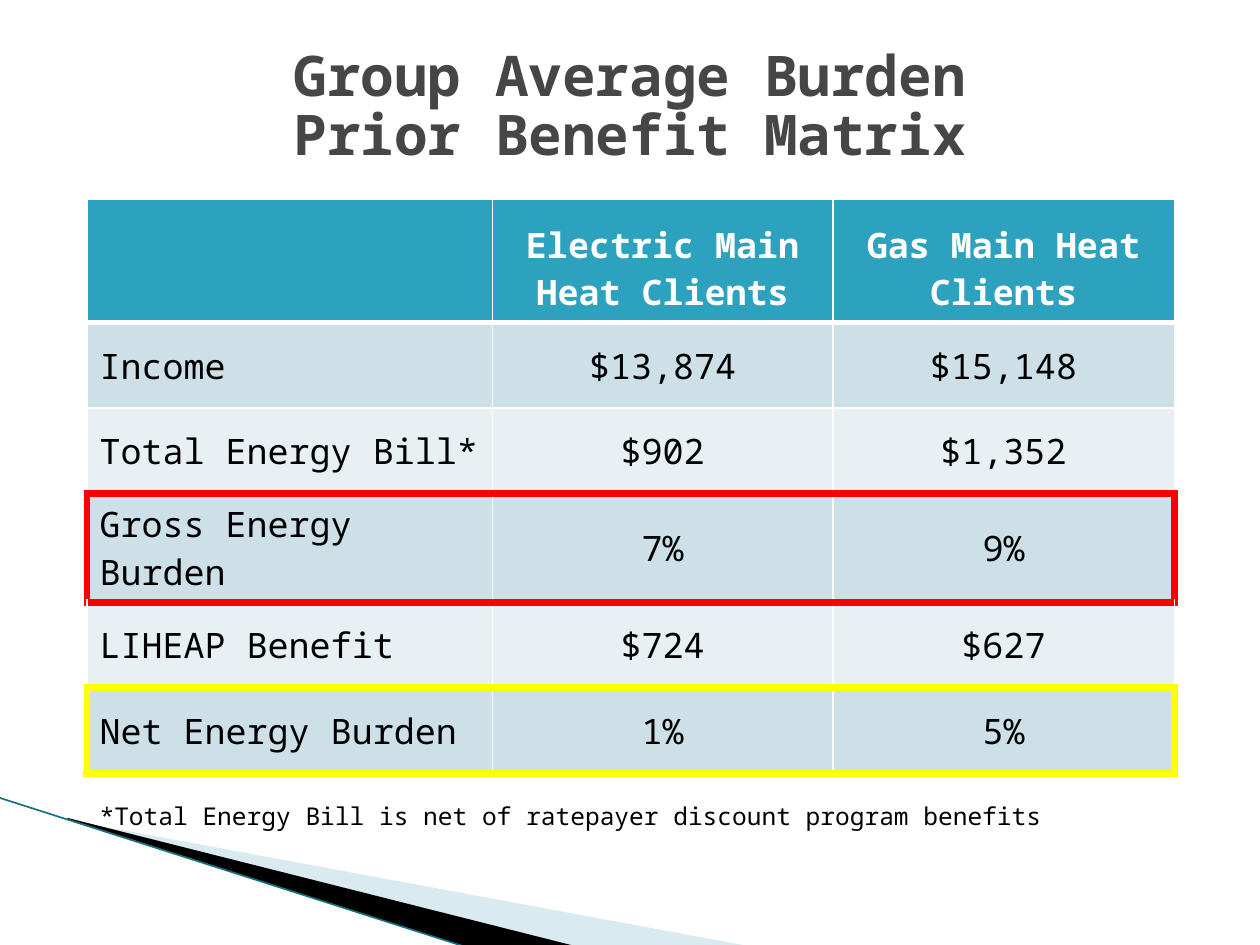
from dataclasses import dataclass

from lxml import etree
from pptx import Presentation
from pptx.dml.color import RGBColor
from pptx.enum.shapes import MSO_CONNECTOR
from pptx.enum.text import MSO_ANCHOR, PP_ALIGN
from pptx.oxml.ns import qn
from pptx.util import Emu, Pt

PX = 9144
FONT = "Noto Sans Mono"
CENTER, LEFT = PP_ALIGN.CENTER, PP_ALIGN.LEFT
MIDDLE, BOTTOM = MSO_ANCHOR.MIDDLE, MSO_ANCHOR.BOTTOM
STRAIGHT = MSO_CONNECTOR.STRAIGHT
WHITE, BLACK, RED, YELLOW = "FFFFFF", "000000", "FF0000", "FFFF00"
HEADER_FILL = "2DA2BF"
BAND_FILLS = ["CDE0E8", "E8F0F4"]
COLUMN_WIDTHS = [322, 270, 271]
HEADER_HEIGHT, ROW_HEIGHT = 98, 68
THICK = 4.5
HIGHLIGHTS = {3: RED, 5: YELLOW}
ROWS = [
    ["", "Electric Main Heat Clients", "Gas Main Heat Clients"],
    ["Income", "$13,874", "$15,148"],
    ["Total Energy Bill*", "$902", "$1,352"],
    ["Gross Energy Burden", "7%", "9%"],
    ["LIHEAP Benefit", "$724", "$627"],
    ["Net Energy Burden", "1%", "5%"],
]
FOOTNOTE = "*Total Energy Bill is net of ratepayer discount program benefits"


@dataclass
class Wedge:
    points: list[tuple[int, int]]
    color: str
    opacity: int = 100


@dataclass
class Border:
    color: str | None = WHITE
    width: float = 1


WEDGES = [
    Wedge([(55, 651), (595, 751), (456, 751), (55, 650)], "A0CBDC", 40),
    Wedge([(53, 649), (457, 751), (372, 752), (54, 650)], BLACK),
]


def px(length: int) -> Emu:
    return Emu(length * PX)


def rgb(color: str) -> RGBColor:
    return RGBColor.from_string(color)


def style_paragraph(paragraph, size: float, color: str, bold: bool, align) -> None:
    paragraph.alignment = align
    for run in paragraph.runs:
        run.font.name = FONT
        run.font.size = Pt(size)
        run.font.bold = bold
        run.font.color.rgb = rgb(color)


def draw_wedge(slide, wedge: Wedge) -> None:
    builder = slide.shapes.build_freeform(*wedge.points[0], scale=PX)
    builder.add_line_segments(wedge.points[1:])
    shape = builder.convert_to_shape()
    shape.shadow.inherit = False
    shape.line.fill.background()
    shape.fill.solid()
    shape.fill.fore_color.rgb = rgb(wedge.color)
    if wedge.opacity < 100:
        color = shape.fill._xPr.find(".//" + qn("a:srgbClr"))
        etree.SubElement(color, qn("a:alpha"), val=str(wedge.opacity * 1000))


def draw_edge(slide) -> None:
    line = slide.shapes.add_connector(STRAIGHT, px(-1), px(633), px(371), px(752))
    line.line.color.rgb = rgb("16707F")
    line.line.width = Pt(0.95)
    etree.SubElement(line._element.spPr, qn("a:effectLst"))


def draw_title(slide) -> None:
    title = slide.shapes.title
    title.left, title.top, title.width, title.height = map(px, (69, 40, 862, 92))
    frame = title.text_frame
    frame.text = "Group Average Burden\vPrior Benefit Matrix"
    frame.vertical_anchor = MIDDLE
    paragraph = frame.paragraphs[0]
    paragraph.line_spacing = 0.88
    style_paragraph(paragraph, 32, "464646", True, CENTER)


def set_borders(cell, borders: dict[str, Border]) -> None:
    properties = cell._tc.get_or_add_tcPr()
    for side in "LRTB":
        border = borders[side]
        line = etree.SubElement(properties, qn(f"a:ln{side}"), w=str(Pt(border.width)))
        if border.color is None:
            etree.SubElement(line, qn("a:noFill"))
        else:
            fill = etree.SubElement(line, qn("a:solidFill"))
            etree.SubElement(fill, qn("a:srgbClr"), val=border.color)


def horizontal_border(above: int) -> Border:
    color = HIGHLIGHTS.get(above) or HIGHLIGHTS.get(above + 1)
    if color:
        return Border(color, THICK)
    return Border(width=3) if above == 0 else Border()


def cell_borders(row: int, column: int) -> dict[str, Border]:
    borders = {"L": Border(), "R": Border()}
    borders["T"] = horizontal_border(row - 1)
    borders["B"] = horizontal_border(row)
    if row in HIGHLIGHTS and column != 1:
        borders["L" if column == 0 else "R"] = Border(HIGHLIGHTS[row], THICK)
    if row == len(ROWS):
        for side in "LRB":
            borders[side] = Border(None)
    return borders


def fill_cell(cell, text: str, row: int, column: int) -> None:
    header, footnote = row == 0, row == len(ROWS)
    set_borders(cell, cell_borders(row, column))
    if footnote:
        cell.fill.background()
    else:
        cell.fill.solid()
        fill = HEADER_FILL if header else BAND_FILLS[(row - 1) % 2]
        cell.fill.fore_color.rgb = rgb(fill)
    cell.vertical_anchor = BOTTOM if header else MIDDLE
    if not text:
        return
    cell.text_frame.text = text
    paragraph = cell.text_frame.paragraphs[0]
    paragraph.space_before = paragraph.space_after = Pt(12 if footnote else 6)
    style_paragraph(paragraph, 14 if footnote else 20, WHITE if header else BLACK,
                    header, CENTER if column else LEFT)


def draw_table(slide) -> None:
    rows = ROWS + [[FOOTNOTE, "", ""]]
    heights = [HEADER_HEIGHT] + [ROW_HEIGHT] * len(ROWS)
    frame = slide.shapes.add_table(len(rows), len(COLUMN_WIDTHS), px(69), px(158),
                                   px(sum(COLUMN_WIDTHS)), px(sum(heights)))
    table = frame.table
    for column, width in zip(table.columns, COLUMN_WIDTHS):
        column.width = px(width)
    for row, height in zip(table.rows, heights):
        row.height = px(height)
    last = len(ROWS)
    table.cell(last, 0).merge(table.cell(last, len(COLUMN_WIDTHS) - 1))
    for row_index, texts in enumerate(rows):
        for column_index, text in enumerate(texts):
            fill_cell(table.cell(row_index, column_index), text, row_index, column_index)


def main() -> None:
    presentation = Presentation()
    presentation.slide_width, presentation.slide_height = px(1000), px(750)
    slide = presentation.slides.add_slide(presentation.slide_layouts[5])
    for wedge in WEDGES:
        draw_wedge(slide, wedge)
    draw_edge(slide)
    draw_title(slide)
    draw_table(slide)
    presentation.save("out.pptx")


if __name__ == "__main__":
    main()
